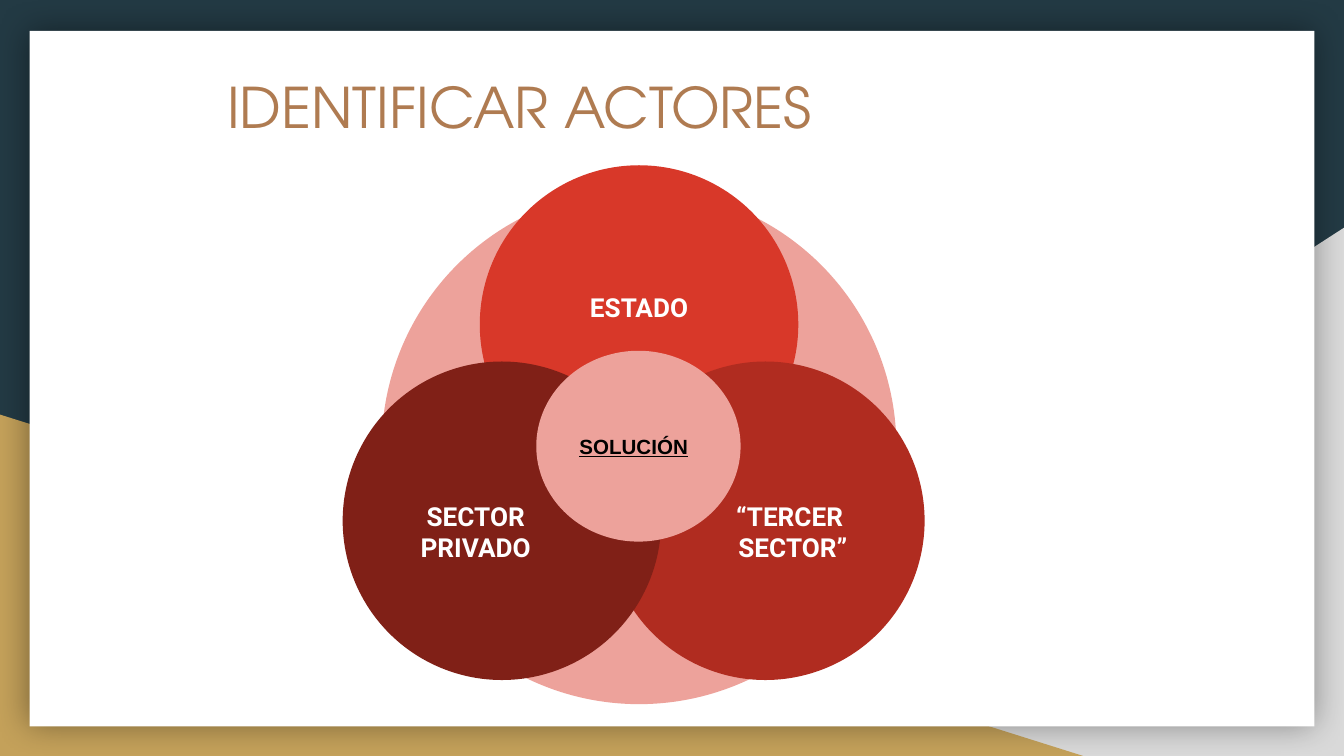
from dataclasses import dataclass

from lxml import etree
from pptx import Presentation
from pptx.dml.color import RGBColor as Color
from pptx.enum.shapes import MSO_SHAPE as Shape
from pptx.enum.text import MSO_ANCHOR as Anchor, PP_ALIGN as Align
from pptx.oxml.ns import qn
from pptx.util import Inches, Pt

SLIDE_WIDTH = 10
SLIDE_HEIGHT = SLIDE_WIDTH * 9 / 16


@dataclass(frozen=True)
class Theme:
    """Colours, fonts and type sizes of the slide."""
    navy: str = "233A44"
    gray: str = "D9D9D9"
    gold: str = "C4A15A"
    white: str = "FFFFFF"
    black: str = "000000"
    brown: str = "AF7B51"
    pink: str = "EDA29B"
    red: str = "D83829"
    brick: str = "B02C20"
    maroon: str = "802017"
    title_font: str = "TeX Gyre Adventor"
    label_font: str = "Roboto"
    center_font: str = "Arial"
    title_size: int = 30
    label_size: int = 14
    center_size: int = 11


THEME = Theme()


def to_inches(box):
    """Turn a left, top, width, height box into lengths."""
    return [Inches(value) for value in box]


def add_filled(shapes, kind, box, color):
    """Add a preset shape with a plain fill and no outline."""
    shape = shapes.add_shape(kind, *to_inches(box))
    shape.shadow.inherit = False
    shape.fill.solid()
    shape.fill.fore_color.rgb = Color.from_string(color)
    shape.line.fill.background()
    return shape


def write_text(shape, lines, font_name, size, color, align, anchor, bold=False, underline=False):
    """Write one paragraph for each line, all in the same style."""
    frame = shape.text_frame
    frame.word_wrap = True
    frame.vertical_anchor = anchor
    frame.margin_left = frame.margin_right = Inches(0.1)
    frame.margin_top = frame.margin_bottom = Inches(0.1)
    frame.text = "\n".join(lines)
    for paragraph in frame.paragraphs:
        paragraph.alignment = align
        font = paragraph.font
        font.name, font.size = font_name, Pt(size)
        font.bold, font.underline = bold, underline
        font.color.rgb = Color.from_string(color)


def add_glow_shadow(shape, blur, opacity):
    """Give a shape a soft black shadow on all sides."""
    effects = shape.element.spPr.find(qn("a:effectLst"))
    shadow = etree.SubElement(effects, qn("a:outerShdw"), blurRad=str(Pt(blur)), dist="0",
                              algn="ctr", rotWithShape="0")
    color = etree.SubElement(shadow, qn("a:srgbClr"), val=THEME.black)
    etree.SubElement(color, qn("a:alpha"), val=str(opacity * 1000))


def add_backdrop(slide, box):
    """Draw the corner triangles and the white card, and return the card."""
    left, top, width, height = box
    fill = slide.background.fill
    fill.solid()
    fill.fore_color.rgb = Color.from_string(THEME.navy)
    right_corner = add_filled(slide.shapes, Shape.RIGHT_TRIANGLE,
                              (left + width - 6.08, top + height - 3.93, 6.08, 3.93), THEME.gray)
    right_corner.element.spPr.find(qn("a:xfrm")).set("flipH", "1")
    add_filled(slide.shapes, Shape.RIGHT_TRIANGLE,
               (left, top + height - 2.54, 8.06, 2.54), THEME.gold)
    card = add_filled(slide.shapes, Shape.RECTANGLE,
                      (left + 0.22, top + 0.23, width - 0.44, height - 0.45), THEME.white)
    add_glow_shadow(card, 18, 40)
    return card


def place_title(slide, box, card):
    """Place the title placeholder in front of the card."""
    title = slide.shapes.title
    title.left, title.top, title.width, title.height = to_inches(box)
    write_text(title, ["IDENTIFICAR ACTORES"], THEME.title_font, THEME.title_size,
               THEME.brown, Align.LEFT, Anchor.TOP)
    card.element.addnext(title.element)


def add_actor(slide, circle, label_offset, lines, color):
    """Group an actor's circle with its label."""
    left, top = circle[:2]
    shapes = slide.shapes.add_group_shape().shapes
    add_filled(shapes, Shape.OVAL, circle, color)
    label = shapes.add_textbox(*to_inches((left + label_offset[0], top + label_offset[1], 1.64, 0.77)))
    write_text(label, lines, THEME.label_font, THEME.label_size, THEME.white,
               Align.CENTER, Anchor.MIDDLE, bold=True)


def add_actor_diagram(slide, box):
    """Draw three actors on a ring with the solution in the middle."""
    left, top, _, _ = box
    diameter = 2.37
    add_filled(slide.shapes, Shape.OVAL, (left + 0.29, top + 0.18, 3.83, 3.83), THEME.pink)
    actors = [
        (1.02, 0, (0.39, 0.67), ["ESTADO "], THEME.red),
        (1.96, 1.46, (0.57, 0.88), ["“TERCER ", "SECTOR”"], THEME.brick),
        (0, 1.46, (0.17, 0.88), ["SECTOR PRIVADO"], THEME.maroon),
    ]
    for x, y, label_offset, lines, color in actors:
        add_actor(slide, (left + x, top + y, diameter, diameter), label_offset, lines, color)
    solution = add_filled(slide.shapes, Shape.OVAL, (left + 1.44, top + 1.38, 1.52, 1.42), THEME.pink)
    write_text(solution, ["SOLUCIÓN"], THEME.center_font, THEME.center_size, THEME.black,
               Align.LEFT, Anchor.MIDDLE, bold=True, underline=True)


def main():
    """Build the slide and save it."""
    presentation = Presentation()
    presentation.slide_width = Inches(SLIDE_WIDTH)
    presentation.slide_height = Inches(SLIDE_HEIGHT)
    slide = presentation.slides.add_slide(presentation.slide_layouts[5])
    card = add_backdrop(slide, (0, 0, SLIDE_WIDTH, SLIDE_HEIGHT))
    place_title(slide, (1.59, 0.44, 8.21, 1.04), card)
    add_actor_diagram(slide, (2.55, 1.23, 4.33, 4.01))
    presentation.save("out.pptx")


if __name__ == "__main__":
    main()
